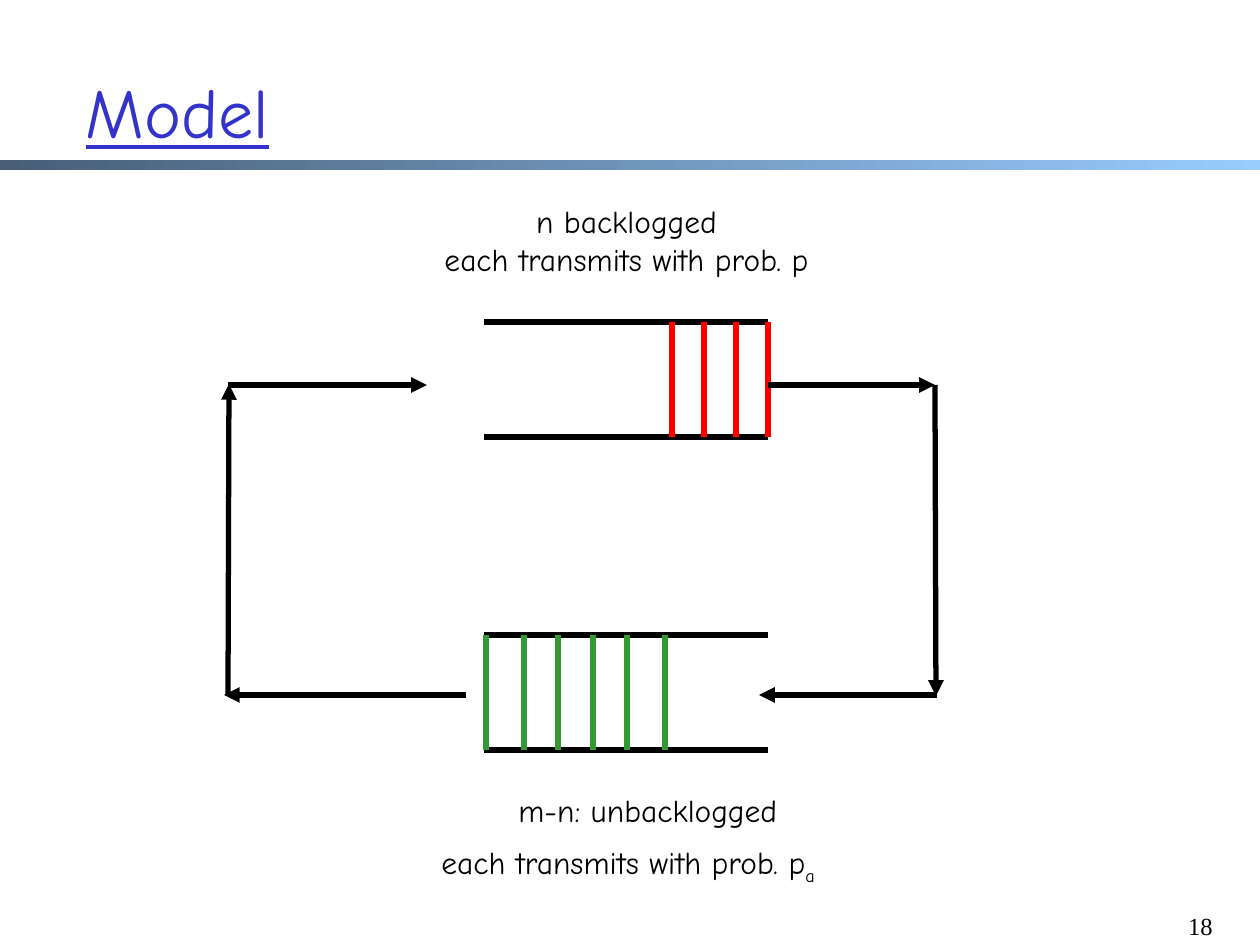
import pptx
import pptx.util
import pptx.dml.color
import pptx.enum.shapes
import pptx.enum.text
import pptx.oxml
import pptx.oxml.ns

RGBColor = pptx.dml.color.RGBColor
Align = pptx.enum.text.PP_ALIGN
Anchor = pptx.enum.text.MSO_ANCHOR

BLACK = RGBColor(0x00, 0x00, 0x00)
RED = RGBColor(0xFF, 0x00, 0x00)
GREEN = RGBColor(0x33, 0x99, 0x33)
TITLE_BLUE = RGBColor(0x33, 0x33, 0xCC)
BAR_DARK = RGBColor(0x47, 0x5E, 0x76)
BAR_LIGHT = RGBColor(0x99, 0xCC, 0xFF)

BODY_FONT = "Comic Neue"
NUMBER_FONT = "Times New Roman"
PX_PER_INCH = 126


def px(length):
    return pptx.util.Emu(round(length * 914400 / PX_PER_INCH))


def format_span(span, size, font, color):
    span.font.size = pptx.util.Pt(size)
    span.font.name = font
    span.font.color.rgb = color


def add_line(page, start, end, color=BLACK, arrow=False):
    line = page.shapes.add_connector(
        pptx.enum.shapes.MSO_CONNECTOR.STRAIGHT, *map(px, start + end))
    line.line.color.rgb = color
    line.line.width = pptx.util.Pt(3)
    if arrow:
        outline = line.line._get_or_add_ln()
        head = pptx.oxml.parse_xml(
            f'<a:tailEnd {pptx.oxml.ns.nsdecls("a")} type="triangle"/>')
        outline.append(head)
    line._element.spPr.append(pptx.oxml.parse_xml(
        f'<a:effectLst {pptx.oxml.ns.nsdecls("a")}/>'))


def add_text(page, box, lines, align=Align.LEFT, size=18, font=BODY_FONT):
    label = page.shapes.add_textbox(*map(px, box))
    frame = label.text_frame
    frame.word_wrap = False
    frame.text = "\n".join(lines)
    for para in frame.paragraphs:
        para.alignment = align
        for span in para.runs:
            format_span(span, size, font, BLACK)
    return label


def add_header(page, box):
    left, top, width, height = box
    bar = page.shapes.add_shape(
        pptx.enum.shapes.MSO_SHAPE.RECTANGLE,
        px(left), px(top + 160), px(width), px(10))
    bar.shadow.inherit = False
    bar.line.fill.background()
    bar.fill.gradient()
    bar.fill.gradient_angle = 0
    for stop, color in zip(bar.fill.gradient_stops, (BAR_DARK, BAR_LIGHT)):
        stop.color.rgb = color

    title = page.shapes.title
    title.left, title.top = px(left + 73), px(top + 32)
    title.width, title.height = px(1106), px(157)
    frame = title.text_frame
    frame.text = "Model"
    frame.vertical_anchor = Anchor.MIDDLE
    para = frame.paragraphs[0]
    para.alignment = Align.LEFT
    format_span(para.runs[0], 40, BODY_FONT, TITLE_BLUE)
    para.runs[0].font.underline = True


def add_queue(page, box, offsets, color):
    left, top, width, height = box
    for y in (top, top + height):
        add_line(page, (left, y), (left + width, y))
    for offset in offsets:
        x = left + offset
        add_line(page, (x, top), (x, top + height), color)


def add_loop(page, box):
    left, top, width, height = box
    right, bottom = left + width, top + height
    arrows = [
        ((left, top), (left + 199, top)),
        ((left + 540, top), (right, top)),
        ((right, top), (right + 1, bottom + 1)),
        ((right + 2, bottom), (right - 176, bottom)),
        ((left + 238, bottom), (left - 4, bottom)),
        ((left, bottom), (left + 1, top - 1)),
    ]
    for start, end in arrows:
        add_line(page, start, end, arrow=True)


def add_labels(page, box):
    left, top, width, height = box
    add_text(page, (left, top, 427, 88),
             ["n backlogged", "each transmits with prob. p"], Align.CENTER)
    add_text(page, (left + 93, top + 589, 294, 50), ["m-n: unbacklogged"])
    rate = add_text(page, (left + 16, top + 641, 438, 50),
                    ["each transmits with prob. p"])
    subscript = rate.text_frame.paragraphs[0].add_run()
    subscript.text = "a"
    format_span(subscript, 18, BODY_FONT, BLACK)
    subscript.font._element.set("baseline", "-25000")


def add_model(page, box):
    left, top, width, height = box
    queue_left, queue_width, queue_height = left + 256, 284, 115
    add_queue(page, (queue_left, top + 126, queue_width, queue_height),
              [queue_width - 32 * step for step in range(4)], RED)
    add_queue(page, (queue_left, top + 439, queue_width, queue_height),
              (2, 40, 74, 109, 143, 181), GREEN)
    add_loop(page, (left, top + 189, width, 310))
    add_labels(page, (left + 185, top, 454, height))


def main():
    deck = pptx.Presentation()
    deck.slide_width, deck.slide_height = px(1260), px(945)
    page = deck.slides.add_slide(deck.slide_layouts.get_by_name("Title Only"))
    add_header(page, (0, 0, 1260, 170))
    add_model(page, (228, 196, 707, 691))
    add_text(page, (1166, 905, 59, 40), ["18"], Align.RIGHT, 14, NUMBER_FONT)
    deck.save("out.pptx")


if __name__ == "__main__":
    main()
